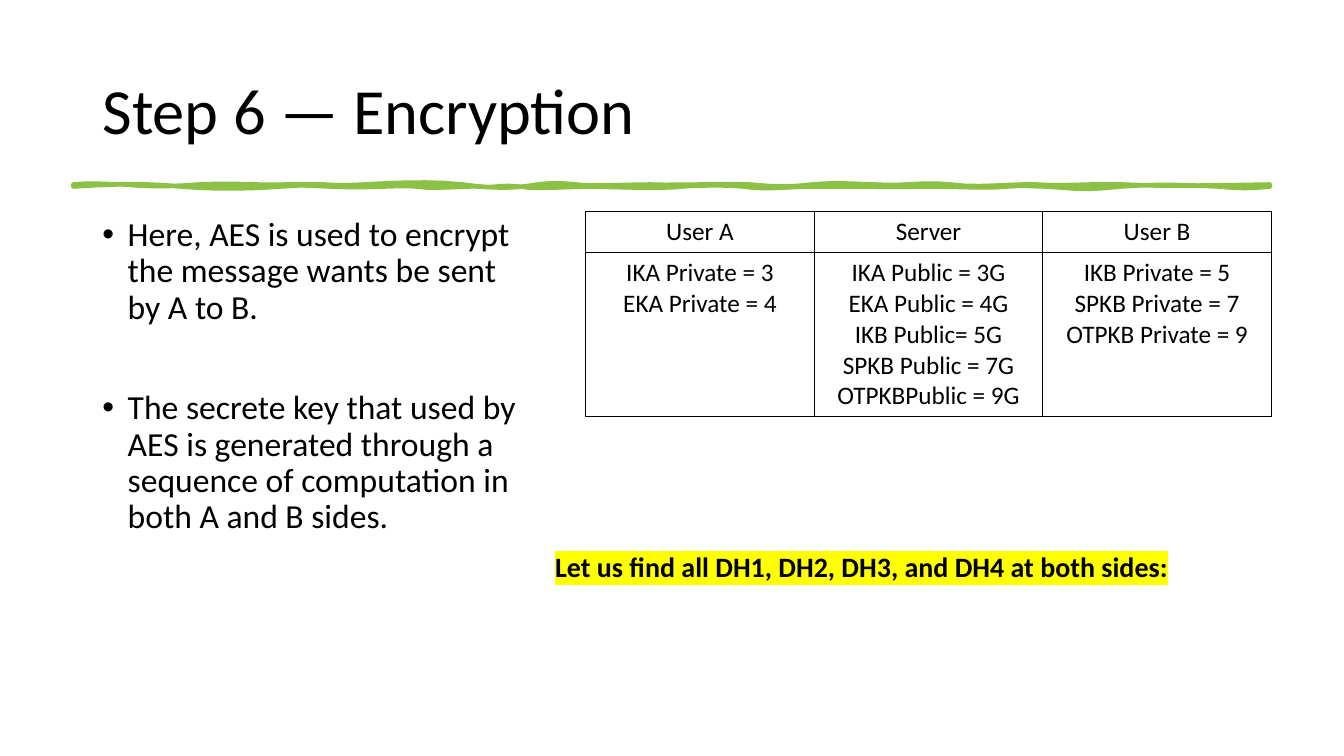
from lxml import etree
from pptx import Presentation
from pptx import util as u
from pptx.dml.color import RGBColor
from pptx.enum import text as t
from pptx.oxml.ns import qn

BLACK = RGBColor(0x00, 0x00, 0x00)
GREEN = RGBColor(0x8B, 0xC1, 0x45)
YELLOW = RGBColor(0xFF, 0xFF, 0x00)
FONT = "Calibri"

HEADS = ["User A", "Server", "User B"]
KEYS = [
    ["IKA Private = 3", "EKA Private = 4"],
    ["IKA Public = 3G", "EKA Public = 4G", "IKB Public= 5G",
     "SPKB Public = 7G", "OTPKBPublic = 9G"],
    ["IKB Private = 5", "SPKB Private = 7", "OTPKB Private = 9"],
]
POINTS = [
    "Here, AES is used to encrypt the message wants be sent by A to B.",
    "The secrete key that used by AES is generated through a sequence of "
    "computation in both A and B sides.",
]

# Brush edges in 1/100 inch: two control points, then the end x
UPPER = [
    (16, -2, 38, 0, 51), (63, 1, 89, 3, 125), (161, -2, 178, 1, 211),
    (244, 0, 234, 0, 249), (265, 1, 269, 1, 288), (307, -1, 351, -4, 386),
    (421, 5, 444, 3, 460), (476, -2, 490, -1, 499), (508, 2, 552, 0, 573),
    (594, 1, 650, -1, 671), (692, 2, 709, 3, 733), (757, -2, 765, -1, 795),
    (826, 2, 841, -3, 870), (899, 4, 929, -1, 956), (982, 2, 1005, -1, 1042),
    (1078, 2, 1126, 1, 1187),
]
LOWER = [
    (1169, 2, 1157, 2, 1137), (1117, -1, 1076, -3, 1039),
    (1002, 4, 997, 2, 965), (932, -1, 945, -1, 926), (907, 2, 875, 0, 852),
    (829, 0, 811, 1, 790), (768, 0, 755, 0, 727), (700, 1, 684, 3, 665),
    (646, -2, 615, -1, 603), (590, 2, 551, 1, 517), (482, 0, 464, 3, 442),
    (421, -2, 418, 2, 404), (390, -1, 357, 3, 341), (326, -2, 298, 2, 255),
    (213, -2, 230, -1, 205), (180, 2, 140, 3, 107), (74, -3, 45, -3, 0),
]


def put(frame, lines, size, bold=False, align=t.PP_ALIGN.LEFT, pitch=None,
        gap=0, bullet=None, mark=None):
    """Fill a text frame, one paragraph a line."""
    frame.word_wrap = True
    for i, line in enumerate(lines):
        para = frame.paragraphs[0] if i == 0 else frame.add_paragraph()
        if bullet:
            props = para._p.get_or_add_pPr()
            props.set("marL", str(u.Cm(0.64)))
            props.set("indent", str(-u.Cm(0.64)))
            font = etree.SubElement(props, qn("a:buFont"))
            font.set("typeface", "Arial")
            etree.SubElement(props, qn("a:buChar")).set("char", bullet)
        para.alignment = align
        if pitch:
            para.line_spacing = pitch
        if i and gap:
            para.space_before = u.Pt(gap)
        run = para.add_run()
        run.text = line
        run.font.size = u.Pt(size)
        run.font.bold = bold
        run.font.name = FONT
        run.font.color.rgb = BLACK
        if mark:
            tint = etree.Element(qn("a:highlight"))
            etree.SubElement(tint, qn("a:srgbClr")).set("val", str(mark))
            run._r.rPr.find(qn("a:solidFill")).addnext(tint)


def title(slide, box):
    head = slide.shapes.title
    head.left, head.top, head.width, head.height = map(u.Cm, box)
    frame = head.text_frame
    frame.auto_size = t.MSO_AUTO_SIZE.NONE
    frame.vertical_anchor = t.MSO_ANCHOR.MIDDLE
    put(frame, ["Step 6 — Encryption"], 46, pitch=0.9)


def trace(edge, x, base, steps=6):
    """Points along a chain of cubic curves that all end at height base."""
    pts = []
    for ax, ay, bx, by, end in edge:
        for k in range(1, steps + 1):
            s = k / steps
            r = 1 - s
            px = r**3 * x + 3 * r * r * s * ax + 3 * r * s * s * bx + s**3 * end
            py = base + 3 * r * r * s * ay + 3 * r * s * s * by
            pts.append((px * 100, py * 100))
        x = end
    return pts


def brush(slide, left, top):
    far = UPPER[-1][-1]
    pen = slide.shapes.build_freeform(0, 0, scale=u.Inches(1) / 10000)
    pen.add_line_segments(trace(UPPER, 0, 0) + [(far * 100, 200)]
                          + trace(LOWER, far, 2), close=True)
    wave = pen.convert_to_shape(u.Cm(left), u.Cm(top))
    wave.shadow.inherit = False
    wave.fill.solid()
    wave.fill.fore_color.rgb = GREEN
    wave.line.color.rgb = GREEN
    wave.line.width = u.Pt(3.25)


def note(slide, box, lines, size, **form):
    area = slide.shapes.add_textbox(*map(u.Cm, box))
    put(area.text_frame, lines, size, **form)


def edge(cell):
    """Draw a thin black line on all four sides."""
    props = cell._tc.get_or_add_tcPr()
    for side in ("lnL", "lnR", "lnT", "lnB"):
        line = etree.SubElement(props, qn("a:" + side))
        line.set("w", str(u.Pt(1)))
        fill = etree.SubElement(line, qn("a:solidFill"))
        etree.SubElement(fill, qn("a:srgbClr")).set("val", str(BLACK))


def keys(slide, box):
    left, top, width, height = box
    first = 1.04
    grid = slide.shapes.add_table(2, len(HEADS), *map(u.Cm, box)).table
    grid.rows[0].height = u.Cm(first)
    grid.rows[1].height = u.Cm(height - first)
    for c, (head, items) in enumerate(zip(HEADS, KEYS)):
        grid.columns[c].width = u.Cm(width / len(HEADS))
        for r, lines in enumerate(([head], items)):
            cell = grid.cell(r, c)
            edge(cell)
            cell.fill.background()
            put(cell.text_frame, lines, 18, align=t.PP_ALIGN.CENTER)


def main():
    deck = Presentation()
    deck.slide_width, deck.slide_height = u.Cm(33.87), u.Cm(19.05)
    slide = deck.slides.add_slide(deck.slide_layouts[5])
    # Heading and its underline
    title(slide, (2.33, 1.02, 29.21, 3.68))
    brush(slide, 1.85, 4.65)
    # Explanation on the left
    note(slide, (2.33, 5.36, 11.4, 11.81), POINTS, 24, pitch=0.9, gap=46,
         bullet="•")
    # Key table and call to action on the right
    keys(slide, (14.76, 5.33, 17.28, 5.17))
    note(slide, (13.74, 13.72, 16.41, 1.12),
         ["Let us find all DH1, DH2, DH3, and DH4 at both sides:"], 20,
         bold=True, mark=YELLOW)
    deck.save("out.pptx")


if __name__ == "__main__":
    main()
